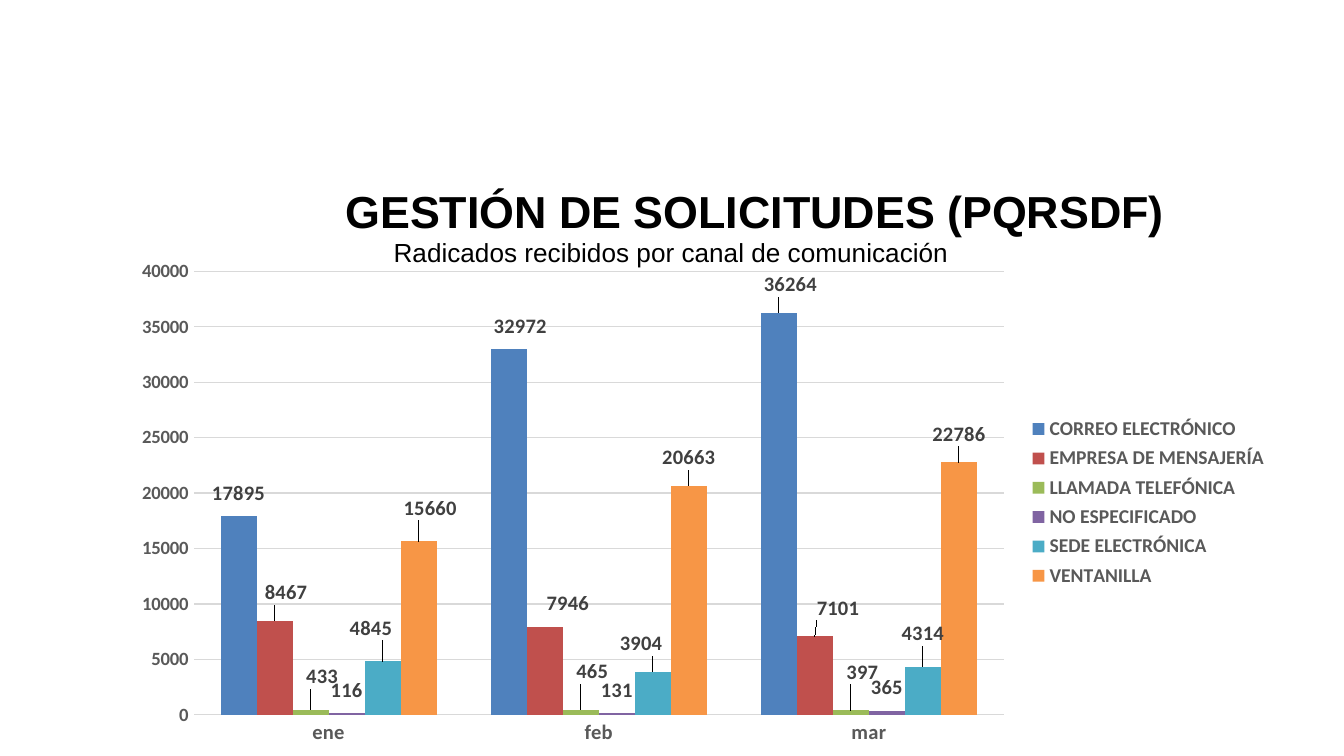
import lxml.etree
import pptx
import pptx.chart.data
import pptx.dml.color
import pptx.enum.chart
import pptx.enum.text
import pptx.oxml
import pptx.oxml.ns
import pptx.util
from pptx.util import Inches

COLORS = {
    "text": "000000",
    "axis": "595959",
    "label": "404040",
    "grid": "D9D9D9",
    "email": "4F81BD",
    "courier": "C0504D",
    "phone": "9BBB59",
    "unspecified": "8064A2",
    "online": "4BACC6",
    "counter": "F79646",
}

MONTHS = ["ene", "feb", "mar"]

CHANNELS = [
    ("CORREO ELECTRÓNICO", "email", (17895, 32972, 36264),
     ((0, -0.01), (0.01, -0.01), (0.01, -0.02))),
    ("EMPRESA DE MENSAJERÍA", "courier", (8467, 7946, 7101),
     ((0.01, -0.02), (0.02, -0.01), (0.02, -0.02))),
    ("LLAMADA TELEFÓNICA", "phone", (433, 465, 397),
     ((0.01, -0.03), (0.01, -0.04), (0.01, -0.04))),
    ("NO ESPECIFICADO", "unspecified", (116, 131, 365),
     ((0, -0.01), (0, -0.01), (0, -0.01))),
    ("SEDE ELECTRÓNICA", "online", (4845, 3904, 4314),
     ((-0.01, -0.03), (-0.01, -0.02), (0, -0.03))),
    ("VENTANILLA", "counter", (15660, 20663, 22786),
     ((0.01, -0.03), (0, -0.02), (0, -0.02))),
]

NO_LEADER_LINES = (
    f"<c:extLst {pptx.oxml.ns.nsdecls('c')}>"
    '<c:ext uri="{CE6537A1-D6FC-4f65-9D91-7224C49458BB}" '
    'xmlns:c15="http://schemas.microsoft.com/office/drawing/2012/chart">'
    '<c15:showLeaderLines val="0"/></c:ext></c:extLst>')


def rgb(name):
    return pptx.dml.color.RGBColor.from_string(COLORS[name])


def format_font(font, size, color="text", name="Calibri", bold=False):
    font.size = pptx.util.Pt(size)
    font.name = name
    font.bold = bold
    font.color.rgb = rgb(color)


def write_text(shape, text, size, bold=False, wrap=True,
               anchor=pptx.enum.text.MSO_ANCHOR.TOP):
    frame = shape.text_frame
    frame.word_wrap = wrap
    frame.vertical_anchor = anchor
    paragraph = frame.paragraphs[0]
    paragraph.alignment = pptx.enum.text.PP_ALIGN.LEFT
    run = paragraph.add_run()
    run.text = text
    format_font(run.font, size, name="Arial", bold=bold)


def make_layout(inner=False, **fractions):
    layout = pptx.oxml.parse_xml(
        f"<c:layout {pptx.oxml.ns.nsdecls('c')}><c:manualLayout/></c:layout>")
    settings = {"layoutTarget": "inner"} if inner else {}
    if "w" in fractions:
        settings.update(xMode="edge", yMode="edge")
    settings.update(fractions)
    for tag, value in settings.items():
        lxml.etree.SubElement(
            layout[0], pptx.oxml.ns.qn(f"c:{tag}"), val=str(value))
    return layout


def add_heading(slide, left, top, width, height):
    title = slide.shapes.title
    title.left, title.top = Inches(left), Inches(top)
    title.width, title.height = Inches(width), Inches(height)
    write_text(title, "GESTIÓN DE SOLICITUDES (PQRSDF)", size=24, bold=True,
               anchor=pptx.enum.text.MSO_ANCHOR.MIDDLE)
    subtitle = slide.shapes.add_textbox(
        Inches(left + 0.36), Inches(top + 0.61), Inches(4.35), Inches(0.34))
    write_text(subtitle, "Radicados recibidos por canal de comunicación",
               size=14, wrap=False)


def format_axes(chart):
    for axis, size in ((chart.category_axis, 11), (chart.value_axis, 10)):
        axis.major_tick_mark = pptx.enum.chart.XL_TICK_MARK.NONE
        axis.minor_tick_mark = pptx.enum.chart.XL_TICK_MARK.NONE
        axis.format.line.fill.background()
        format_font(axis.tick_labels.font, size, color="axis", bold=True)
    axis = chart.value_axis
    axis.minimum_scale, axis.maximum_scale = 0, 40000
    axis.major_unit = 5000
    grid = axis.major_gridlines.format.line
    grid.color.rgb = rgb("grid")
    grid.width = pptx.util.Pt(0.75)


def format_series(series, color, offsets):
    series.format.fill.solid()
    series.format.fill.fore_color.rgb = rgb(color)
    labels = series.data_labels
    labels.show_value = True
    labels.position = pptx.enum.chart.XL_LABEL_POSITION.OUTSIDE_END
    format_font(labels.font, 11, color="label", bold=True)
    for index, _ in enumerate(offsets):
        label = series.points[index].data_label
        label.position = pptx.enum.chart.XL_LABEL_POSITION.OUTSIDE_END
        format_font(label.font, 11, color="label", bold=True)
    group = series._element.xpath("c:dLbls")[0]
    for element, (x, y) in zip(group.xpath("c:dLbl"), offsets):
        element.insert(1, make_layout(x=x, y=y))
    for leader in group.xpath("c:showLeaderLines"):
        leader.getparent().remove(leader)
    group.append(pptx.oxml.parse_xml(NO_LEADER_LINES))


def add_channel_chart(slide, left, top, width, height):
    data = pptx.chart.data.CategoryChartData()
    data.categories = MONTHS
    for name, _, values, _ in CHANNELS:
        data.add_series(name, values)
    chart = slide.shapes.add_chart(
        pptx.enum.chart.XL_CHART_TYPE.COLUMN_CLUSTERED,
        Inches(left), Inches(top), Inches(width), Inches(height), data).chart
    chart.has_title = False
    format_font(chart.font, 10)
    format_axes(chart)

    plot = chart.plots[0]
    plot.gap_width = 150
    plot.overlap = 0
    plot.vary_by_categories = False
    for series, (_, color, _, offsets) in zip(plot.series, CHANNELS):
        format_series(series, color, offsets)

    chart.has_legend = True
    legend = chart.legend
    legend.position = pptx.enum.chart.XL_LEGEND_POSITION.RIGHT
    legend.include_in_layout = False
    format_font(legend.font, 10.5, color="axis", bold=True)

    for old in chart._chartSpace.xpath(
            "c:chart/c:plotArea/c:layout | c:chart/c:legend/c:layout"):
        old.getparent().remove(old)
    plot_area = chart._chartSpace.xpath("c:chart/c:plotArea")[0]
    plot_area.insert(0, make_layout(
        inner=True, x=0.55 / width, y=0.16 / height,
        w=6.03 / width, h=3.3 / height))
    legend._element.insert(1, make_layout(x=0.78, y=0.32, w=0.21, h=0.36))


def main():
    presentation = pptx.Presentation()
    presentation.slide_width = Inches(10)
    presentation.slide_height = presentation.slide_width * 9 // 16
    slide = presentation.slides.add_slide(presentation.slide_layouts[5])
    add_heading(slide, 2.47, 1.1, 7.36, 0.94)
    add_channel_chart(slide, 0.89, 1.86, 8.65, 3.76)
    presentation.save("out.pptx")


if __name__ == "__main__":
    main()
